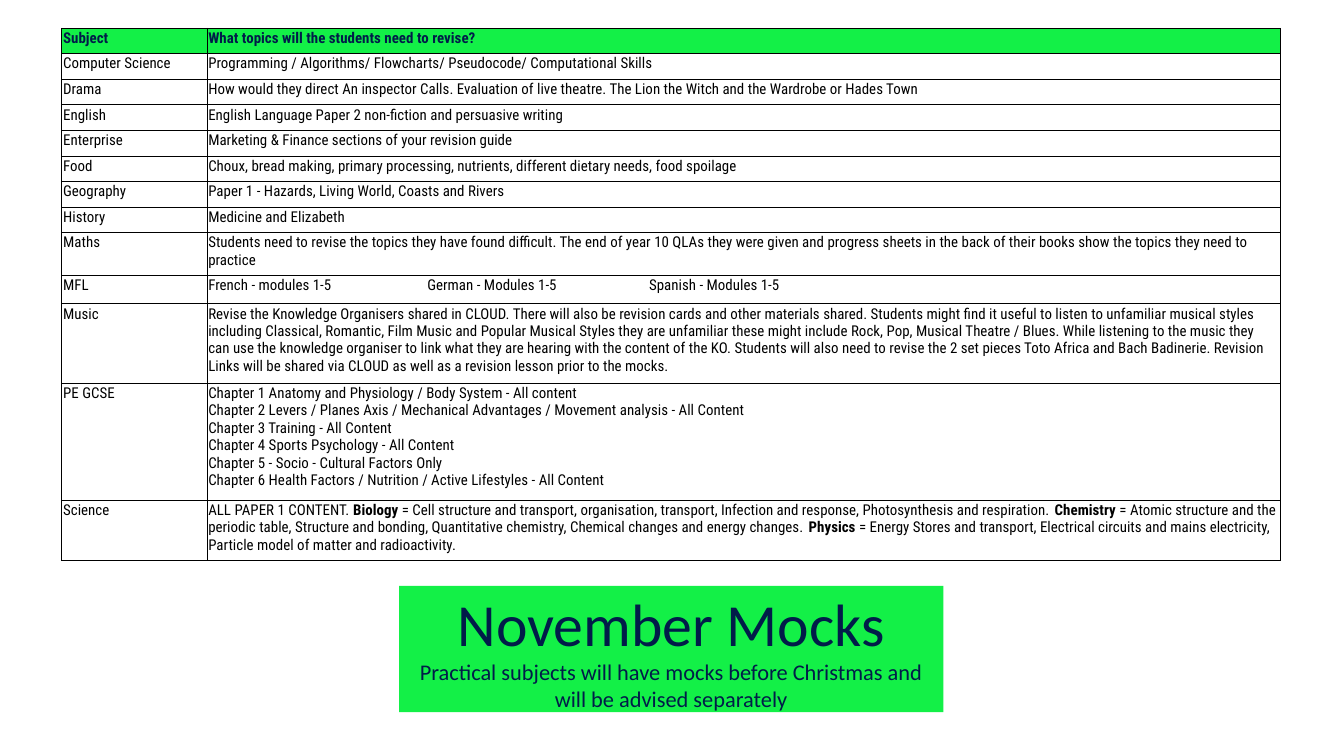
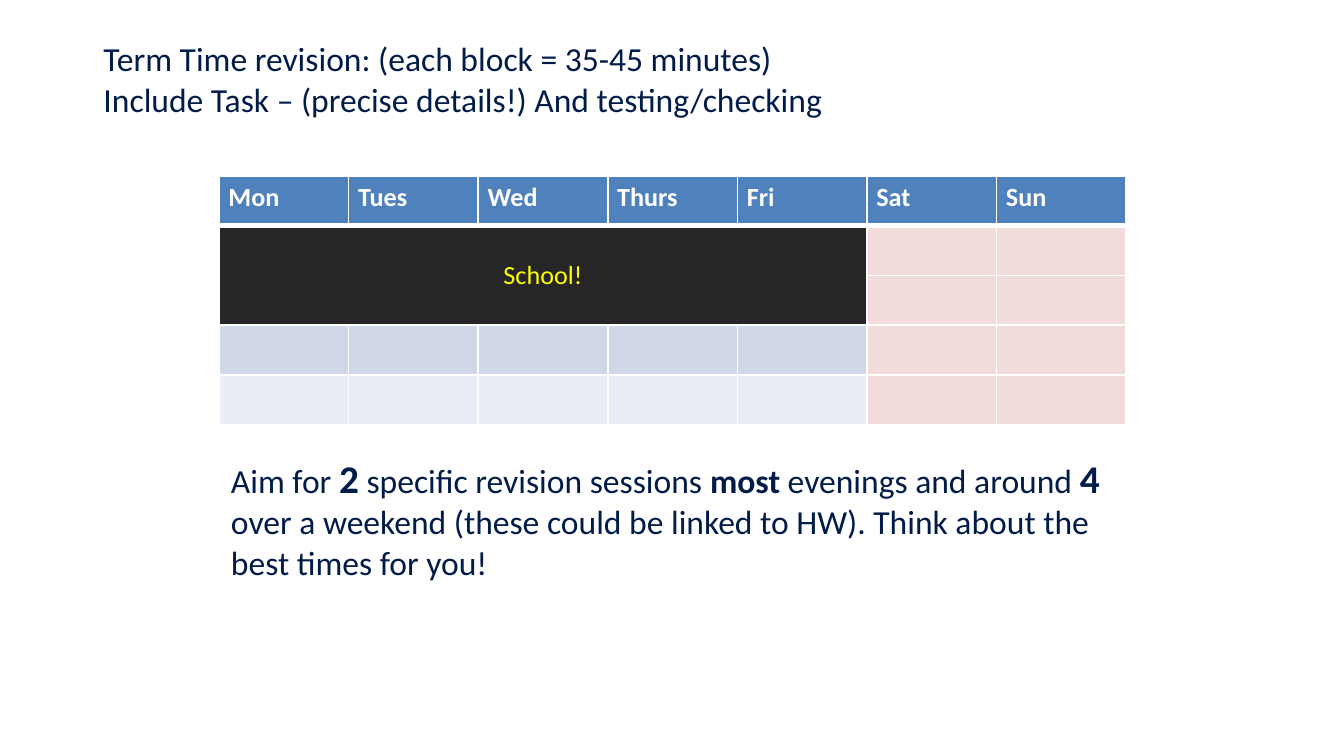
"""Build two revision slides: November mock topics and a weekly term time plan."""
import pptx
import pptx.util
from lxml import etree
from pptx.dml.color import RGBColor
from pptx.enum.text import MSO_ANCHOR, MSO_AUTO_SIZE, PP_ALIGN
from pptx.oxml.ns import qn
from pptx.util import Inches, Pt

NAVY = RGBColor(0x01, 0x1C, 0x49)
GREEN = RGBColor(0x13, 0xF0, 0x47)
BLACK = RGBColor(0x00, 0x00, 0x00)
WHITE = RGBColor(0xFF, 0xFF, 0xFF)
YELLOW = RGBColor(0xFF, 0xFF, 0x00)
BLUE = RGBColor(0x4F, 0x81, 0xBD)
CHARCOAL = RGBColor(0x26, 0x26, 0x26)
PINK = RGBColor(0xF2, 0xDC, 0xDB)
BAND_DARK = RGBColor(0xD0, 0xD8, 0xE8)
BAND_LIGHT = RGBColor(0xE9, 0xED, 0xF4)
MAIN_FONT, TABLE_FONT = "Calibri", "Roboto Condensed"

MOCKS_TITLE = [
    ("November Mocks\n", {"size": 32}),
    ("Practical subjects will have mocks before Christmas and will be advised separately", {}),
]
TOPIC_HEADINGS = ("Subject", "What topics will the students need to revise?")
TOPICS = [
    ("Computer Science", 0.16, "Programming / Algorithms/ Flowcharts/ Pseudocode/ Computational Skills"),
    ("Drama", 0.16, "How would they direct An inspector Calls. Evaluation of live theatre. "
     "The Lion the Witch and the Wardrobe or Hades Town"),
    ("English", 0.16, "English Language Paper 2 non-fiction and persuasive writing"),
    ("Enterprise", 0.16, "Marketing & Finance sections of your revision guide"),
    ("Food", 0.16, "Choux, bread making, primary processing, nutrients, different dietary needs, food spoilage"),
    ("Geography", 0.16, "Paper 1 - Hazards, Living World, Coasts and Rivers"),
    ("History", 0.16, "Medicine and Elizabeth"),
    ("Maths", 0.28, "Students need to revise the topics they have found difficult. The end of year 10 QLAs "
     "they were given and progress sheets in the back of their books show the topics they need to practice"),
    ("MFL", 0.21, "French - modules 1-5\tGerman - Modules 1-5\tSpanish - Modules 1-5"),
    ("Music", 0.59, "Revise the Knowledge Organisers shared in CLOUD. There will also be revision cards and "
     "other materials shared. Students might find it useful to listen to unfamiliar musical styles including "
     "Classical, Romantic, Film Music and Popular Musical Styles they are unfamiliar these might include Rock, "
     "Pop, Musical Theatre / Blues. While listening to the music they can use the knowledge organiser to link "
     "what they are hearing with the content of the KO. Students will also need to revise the 2 set pieces "
     "Toto Africa and Bach Badinerie. Revision Links will be shared via CLOUD as well as a revision lesson "
     "prior to the mocks."),
    ("PE GCSE", 0.87, "Chapter 1 Anatomy and Physiology / Body System - All content\n"
     "Chapter 2 Levers / Planes Axis / Mechanical Advantages / Movement analysis - All Content\n"
     "Chapter 3 Training - All Content\n"
     "Chapter 4 Sports Psychology - All Content\n"
     "Chapter 5 - Socio - Cultural Factors Only\n"
     "Chapter 6 Health Factors / Nutrition / Active Lifestyles - All Content"),
    ("Science", 0.39, [
        ("ALL PAPER 1 CONTENT. ", {}),
        ("Biology ", {"bold": True}),
        ("= Cell structure and transport, organisation, transport, Infection and response, "
         "Photosynthesis and respiration. ", {}),
        ("Chemistry ", {"bold": True}),
        ("= Atomic structure and the periodic table, Structure and bonding, Quantitative chemistry, "
         "Chemical changes and energy changes. ", {}),
        ("Physics ", {"bold": True}),
        ("= Energy Stores and transport, Electrical circuits and mains electricity, "
         "Particle model of matter and radioactivity.", {}),
    ]),
]
LANGUAGE_TABS = (1.63, 3.28)

PLAN_TITLE = ("Term Time revision: (each block = 35-45 minutes)\n"
              "Include Task – (precise details!) And testing/checking")
DAYS = ("Mon", "Tues", "Wed", "Thurs", "Fri", "Sat", "Sun")
WEEKDAYS = 5
WEEKDAY_FILLS = (CHARCOAL, CHARCOAL, BAND_DARK, BAND_LIGHT)
ADVICE = [
    ("Aim for ", {}),
    ("2", {"size": 21, "bold": True}),
    (" specific revision sessions ", {}),
    ("most", {"bold": True}),
    (" evenings and around ", {}),
    ("4", {"size": 21, "bold": True}),
    (" over a weekend (these could be linked to HW). Think about the best times for you!", {}),
]


def write(para, content, face, size, colour, bold=False):
    """Add text or styled spans to a paragraph, run by run."""
    spans = [(content, {})] if isinstance(content, str) else content
    for text, style in spans:
        for index, line in enumerate(text.split("\n")):
            if index:
                para.add_line_break()
            if line:
                span = para.add_run()
                span.text = line
                span.font.name = face
                span.font.size = Pt(style.get("size", size))
                span.font.bold = style.get("bold", bold)
                span.font.color.rgb = colour


def add_tabs(para, stops):
    """Set left tab stops, given in inches."""
    tabs = etree.SubElement(para._p.get_or_add_pPr(), qn("a:tabLst"))
    for stop in stops:
        etree.SubElement(tabs, qn("a:tab"), pos=str(Inches(stop)), algn="l")


def style_cell(cell, fill, line, widths, margins):
    """Set borders (left, right, top, bottom), fill and margins of a cell."""
    properties = cell._tc.get_or_add_tcPr()
    for side, width in zip("LRTB", widths):
        border = etree.SubElement(properties, qn("a:ln" + side), w=str(Pt(width)))
        solid = etree.SubElement(border, qn("a:solidFill"))
        etree.SubElement(solid, qn("a:srgbClr"), val=str(line))
    cell.fill.solid()
    cell.fill.fore_color.rgb = fill
    cell.margin_left, cell.margin_top, cell.margin_right, cell.margin_bottom = map(Inches, margins)


def add_grid(page, left, top, columns, rows):
    """Add a table from its column widths and row heights."""
    table = page.shapes.add_table(len(rows), len(columns), Inches(left), Inches(top),
                                  Inches(sum(columns)), Inches(sum(rows))).table
    for column, width in zip(table.columns, columns):
        column.width = Inches(width)
    for row, height in zip(table.rows, rows):
        row.height = Inches(height)
    return table


def add_page(deck, title, place, size, align):
    """Add a slide whose title placeholder sits at the given place."""
    page = deck.slides.add_slide(deck.slide_layouts[5])
    box = page.shapes.title
    box.left, box.top, box.width, box.height = map(Inches, place)
    frame = box.text_frame
    frame.word_wrap = True
    frame.auto_size = MSO_AUTO_SIZE.NONE
    frame.vertical_anchor = MSO_ANCHOR.MIDDLE
    frame.paragraphs[0].alignment = align
    write(frame.paragraphs[0], title, MAIN_FONT, size, NAVY)
    return page


def build_mocks(deck):
    """Build the table of mock topics by subject."""
    page = add_page(deck, MOCKS_TITLE, (2.97, 4.36, 4.05, 0.94), 12, PP_ALIGN.CENTER)
    page.shapes.title.fill.solid()
    page.shapes.title.fill.fore_color.rgb = GREEN
    heights = [0.16] + [height for _, height, _ in TOPICS]
    table = add_grid(page, 0.46, 0.21, (1.08, 7.99), heights)
    rows = [TOPIC_HEADINGS] + [(subject, topics) for subject, _, topics in TOPICS]
    for row, entries in enumerate(rows):
        heading = row == 0
        for column, content in enumerate(entries):
            cell = table.cell(row, column)
            style_cell(cell, GREEN if heading else WHITE, BLACK, (0.5,) * 4, (0.01, 0.01, 0.01, 0.05))
            cell.vertical_anchor = MSO_ANCHOR.BOTTOM if heading else MSO_ANCHOR.TOP
            para = cell.text_frame.paragraphs[0]
            if "\t" in content:
                add_tabs(para, LANGUAGE_TABS)
            write(para, content, TABLE_FONT, 8, NAVY if heading else BLACK, heading)


def build_plan(deck):
    """Build the weekly revision plan."""
    page = add_page(deck, PLAN_TITLE, (0.67, 0.23, 7.12, 0.71), 18, PP_ALIGN.LEFT)
    row_count = len(WEEKDAY_FILLS) + 1
    table = add_grid(page, 1.63, 1.31, (6.75 / len(DAYS),) * len(DAYS), (0.37,) * row_count)
    for row in range(row_count):
        widths = (1, 1, 3 if row == 1 else 1, 3 if row == 0 else 1)
        for column, day in enumerate(DAYS):
            cell = table.cell(row, column)
            para = cell.text_frame.paragraphs[0]
            if row == 0:
                fill = BLUE
                write(para, day, MAIN_FONT, 14, WHITE, True)
            else:
                fill = WEEKDAY_FILLS[row - 1] if column < WEEKDAYS else PINK
                if (row, column) != (1, 0):
                    etree.SubElement(para._p, qn("a:endParaRPr"), sz="1400")
            style_cell(cell, fill, WHITE, widths, (0.07, 0.04, 0.07, 0.04))
    school = table.cell(1, 0)
    school.merge(table.cell(2, WEEKDAYS - 1))
    school.vertical_anchor = MSO_ANCHOR.MIDDLE
    para = school.text_frame.paragraphs[0]
    para.alignment = PP_ALIGN.CENTER
    write(para, "School!", MAIN_FONT, 14, YELLOW)

    advice = page.shapes.add_textbox(Inches(1.62), Inches(3.33), Inches(6.75), Inches(1.06))
    advice.text_frame.word_wrap = True
    write(advice.text_frame.paragraphs[0], ADVICE, MAIN_FONT, 18, NAVY)


def main():
    """Build and save the deck."""
    deck = pptx.Presentation()
    deck.slide_width = Inches(10)
    deck.slide_height = deck.slide_width * 9 // 16
    build_mocks(deck)
    build_plan(deck)
    deck.save("out.pptx")


if __name__ == "__main__":
    main()
